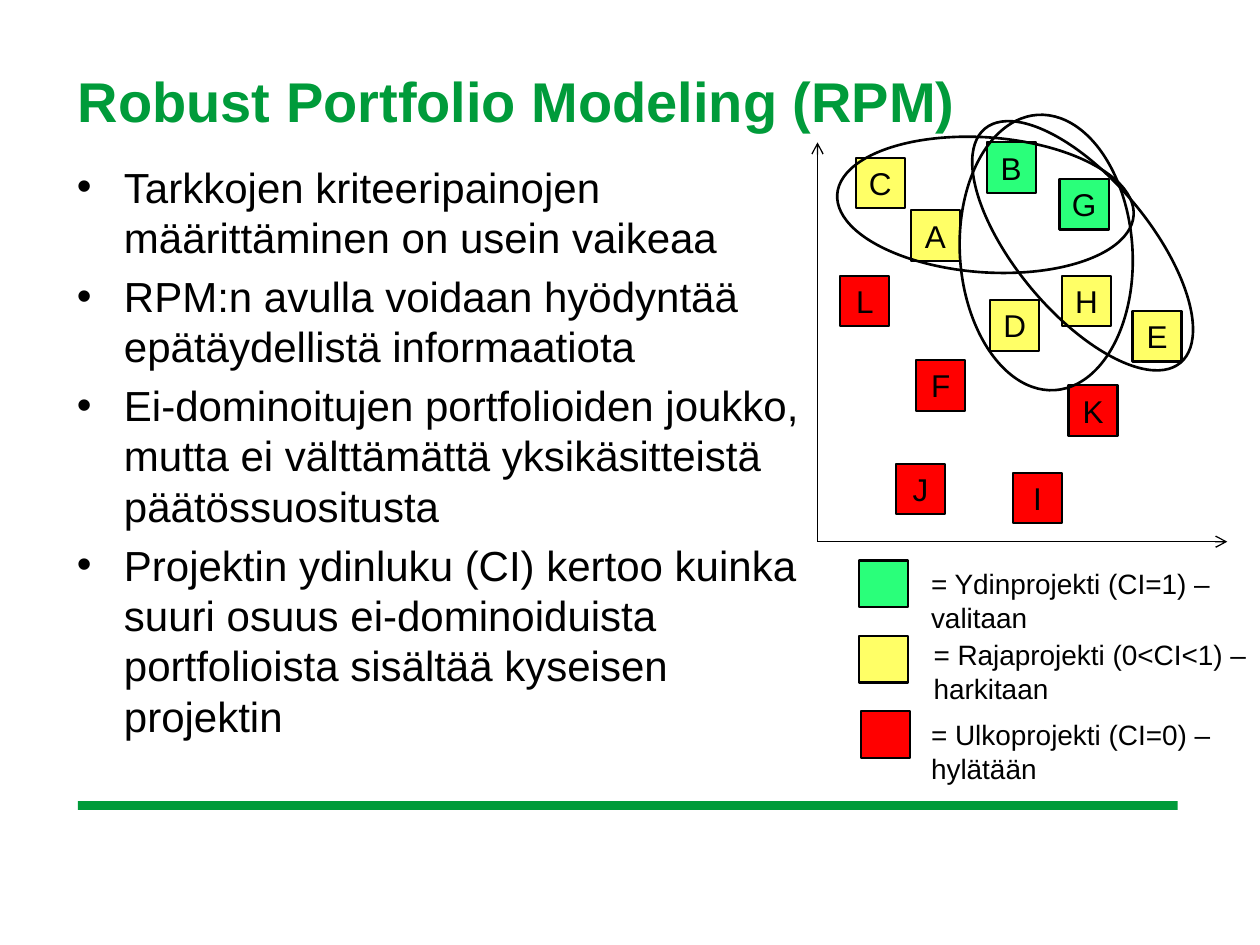
from lxml import etree
from pptx import Presentation
from pptx.dml.color import RGBColor
from pptx.enum.shapes import MSO_CONNECTOR, MSO_SHAPE
from pptx.enum.text import MSO_ANCHOR, PP_ALIGN
from pptx.oxml.ns import qn
from pptx.util import Cm, Pt

RECTANGLE, OVAL = MSO_SHAPE.RECTANGLE, MSO_SHAPE.OVAL
STRAIGHT = MSO_CONNECTOR.STRAIGHT
TOP, MIDDLE = MSO_ANCHOR.TOP, MSO_ANCHOR.MIDDLE
LEFT, CENTER = PP_ALIGN.LEFT, PP_ALIGN.CENTER

BLACK = RGBColor(0x00, 0x00, 0x00)
BRAND_GREEN = RGBColor(0x00, 0x9B, 0x3A)
CORE = RGBColor(0x2A, 0xFF, 0x7A)
BORDERLINE = RGBColor(0xFF, 0xFF, 0x66)
EXTERIOR = RGBColor(0xFF, 0x00, 0x00)

TITLE = "Robust Portfolio Modeling (RPM)"
BULLETS = [
    "Tarkkojen kriteeripainojen määrittäminen on usein vaikeaa",
    "RPM:n avulla voidaan hyödyntää epätäydellistä informaatiota",
    "Ei-dominoitujen portfolioiden joukko, mutta ei välttämättä yksikäsitteistä päätössuositusta",
    "Projektin ydinluku (CI) kertoo kuinka suuri osuus ei-dominoiduista portfolioista sisältää kyseisen projektin",
]
PROJECTS = [
    ("A", 18.36, 4.24, BORDERLINE),
    ("B", 19.89, 2.87, CORE),
    ("C", 17.25, 3.18, BORDERLINE),
    ("D", 19.96, 6.05, BORDERLINE),
    ("E", 22.83, 6.27, BORDERLINE),
    ("F", 18.47, 7.26, EXTERIOR),
    ("G", 21.36, 3.61, CORE),
    ("H", 21.41, 5.56, BORDERLINE),
    ("I", 20.42, 9.53, EXTERIOR),
    ("J", 18.06, 9.35, EXTERIOR),
    ("K", 21.54, 7.77, EXTERIOR),
    ("L", 16.94, 5.56, EXTERIOR),
]
PORTFOLIOS = [
    ((16.87, 2.77, 5.99, 2.72), 4.1),
    ((18.31, 3.35, 5.56, 3.48), 266.5),
    ((18.75, 3.61, 6.15, 2.69), 50.1),
]
LEGEND = [
    (CORE, 17.32, (18.52, 11.3, 6.55, 1.63), ["= Ydinprojekti (CI=1) – valitaan"], True),
    (BORDERLINE, 17.32, (18.57, 12.73, 7.06, 1.63), ["= Rajaprojekti (0<CI<1) –", "harkitaan"], False),
    (EXTERIOR, 17.35, (18.52, 14.35, 6.96, 1.63), ["= Ulkoprojekti (CI=0) – hylätään"], True),
]
LEGEND_TOP, LEGEND_STEP = 11.3, 1.52
AXIS_ORIGIN = (16.48, 10.92)
AXIS_ENDS = [(24.74, 10.92), (16.48, 2.87)]


def set_values(target, values):
    for name, value in values.items():
        setattr(target, name, value)


def add_bullet(para):
    properties = para._p.get_or_add_pPr()
    properties.set("marL", str(Cm(0.95)))
    properties.set("indent", str(-Cm(0.95)))
    etree.SubElement(properties, qn("a:buFont")).set("typeface", "Arial")
    etree.SubElement(properties, qn("a:buChar")).set("char", "•")


def write(shape, texts, size, color=BLACK, bold=False, align=LEFT, bulleted=False, **frame_format):
    frame = shape.text_frame
    set_values(frame, frame_format)
    for index, text in enumerate(texts):
        para = frame.paragraphs[0] if index == 0 else frame.add_paragraph()
        para.alignment = align
        if bulleted:
            if index:
                para.space_before = Pt(0.2 * size)
            add_bullet(para)
        span = para.add_run()
        span.text = text
        set_values(span.font, {"name": "Arial", "size": Pt(size), "bold": bold})
        span.font.color.rgb = color


def add_text(page, area, texts, size, **text_format):
    box = page.shapes.add_textbox(*map(Cm, area))
    write(box, texts, size, **text_format)


def add_figure(page, kind, area, fill=None, line_width=None):
    shape = page.shapes.add_shape(kind, *map(Cm, area))
    shape.shadow.inherit = False
    if fill is None:
        shape.fill.background()
    else:
        shape.fill.solid()
        shape.fill.fore_color.rgb = fill
    if line_width is None:
        shape.line.fill.background()
    else:
        shape.line.color.rgb = BLACK
        shape.line.width = Pt(line_width)
    return shape


def add_axis(page, start, end):
    axis = page.shapes.add_connector(STRAIGHT, *map(Cm, start + end))
    axis.line.color.rgb = BLACK
    axis.line.width = Pt(0.75)
    etree.SubElement(axis.line._get_or_add_ln(), qn("a:tailEnd")).set("type", "arrow")
    etree.SubElement(axis._element.spPr, qn("a:effectLst"))


def main():
    deck = Presentation()
    deck.slide_width, deck.slide_height = Cm(25.4), Cm(19.05)
    page = deck.slides.add_slide(deck.slide_layouts[6])
    no_margins = dict.fromkeys(("margin_left", "margin_top", "margin_right", "margin_bottom"), 0)

    add_figure(page, RECTANGLE, (1.57, 16.15, 22.17, 0.18), BRAND_GREEN)
    add_text(page, (1.57, 1.35, 22.17, 3), [TITLE], 32, color=BRAND_GREEN, bold=True,
             word_wrap=True, vertical_anchor=TOP, **no_margins)
    add_text(page, (1.55, 3.25, 14.68, 11.48), BULLETS, 24, bulleted=True,
             word_wrap=True, vertical_anchor=TOP, **no_margins)

    for end in AXIS_ENDS:
        add_axis(page, AXIS_ORIGIN, end)
    for letter, left, top, color in PROJECTS:
        square = add_figure(page, RECTANGLE, (left, top, 0.99, 1.02), color, 1.25)
        write(square, [letter], 18, align=CENTER, word_wrap=False, vertical_anchor=MIDDLE)
    for area, angle in PORTFOLIOS:
        add_figure(page, OVAL, area, line_width=1.5).rotation = angle
    for index, (color, left, area, texts, wrap) in enumerate(LEGEND):
        top = LEGEND_TOP + index * LEGEND_STEP
        add_figure(page, RECTANGLE, (left, top, 0.99, 0.94), color, 1.25)
        add_text(page, area, texts, 16, word_wrap=wrap)

    deck.save("out.pptx")


if __name__ == "__main__":
    main()
